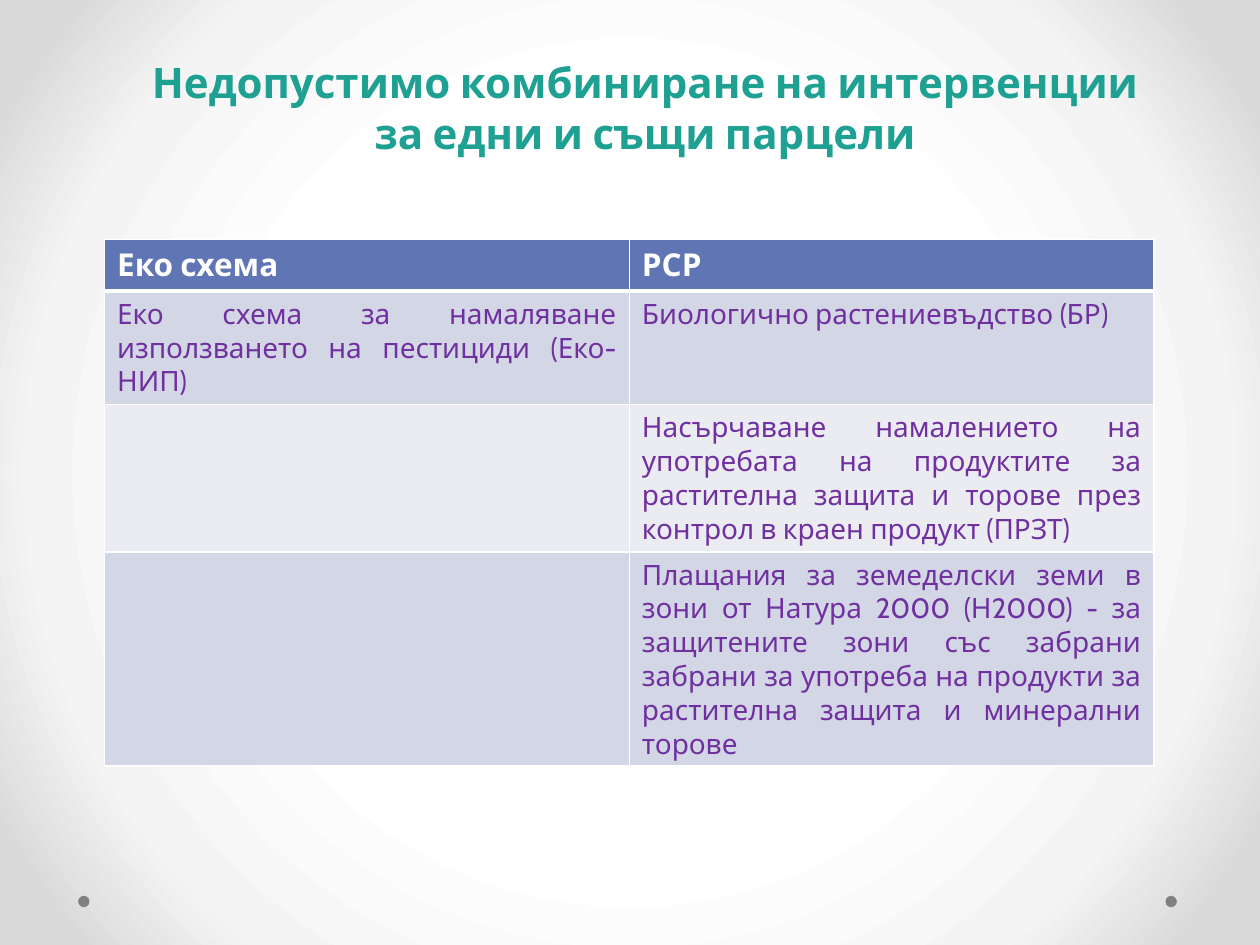
from dataclasses import dataclass

import pptx
import pptx.dml.color
import pptx.enum.shapes
import pptx.enum.text
import pptx.oxml
import pptx.oxml.ns
import pptx.util
from pptx.util import Inches

ALIGN = pptx.enum.text.PP_ALIGN
COLORS = {
    "title": "1EA092",
    "header": "6076B4",
    "odd_row": "D2D6E5",
    "even_row": "EAECF2",
    "body": "7030A0",
    "white": "FFFFFF",
    "dot": "808080",
}
BACKGROUND_STOPS = [(50, "FFFFFF"), (76, "F4F4F4"), (92, "DADADA")]
NAMESPACE = pptx.oxml.ns.nsdecls("a", "p")


@dataclass
class Row:
    height: float
    texts: tuple[str, str]


ROWS = [
    Row(0.41, ("Еко схема", "РСР")),
    Row(0.9, (
        "Еко схема за намаляване използването на пестициди (Еко-НИП)",
        "Биологично растениевъдство (БР)",
    )),
    Row(1.17, (
        "",
        "Насърчаване намалението на употребата на продуктите за растителна "
        "защита и торове през контрол в краен продукт (ПРЗТ)",
    )),
    Row(1.69, (
        "",
        "Плащания за земеделски земи в зони от Натура 2000 (Н2000) - за "
        "защитените зони със забрани забрани за употреба на продукти за "
        "растителна защита и минерални торове",
    )),
]


def rgb(name: str) -> pptx.dml.color.RGBColor:
    return pptx.dml.color.RGBColor.from_string(COLORS[name])


def write_text(text_frame, text: str, *, size: float, color: str,
               bold: bool = False, align=None) -> None:
    """Write each line of the text as a formatted paragraph."""
    text_frame.word_wrap = True
    text_frame.text = text
    for paragraph in text_frame.paragraphs:
        paragraph.alignment = align
        font = paragraph.font
        if paragraph.runs:
            font = paragraph.runs[0].font
        font.name = "Cabin"
        font.size = pptx.util.Pt(size)
        font.bold = bold
        font.color.rgb = rgb(color)


def set_background(slide) -> None:
    """Fill the background with a circular gradient from the centre."""
    stops = "".join(
        f'<a:gs pos="{position * 1000}"><a:srgbClr val="{color}"/></a:gs>'
        for position, color in BACKGROUND_STOPS
    )
    background = pptx.oxml.parse_xml(
        f'<p:bg {NAMESPACE}><p:bgPr><a:gradFill rotWithShape="1">'
        f'<a:gsLst>{stops}</a:gsLst><a:path path="circle">'
        '<a:fillToRect l="50000" t="50000" r="50000" b="50000"/></a:path>'
        '</a:gradFill><a:effectLst/></p:bgPr></p:bg>'
    )
    slide.element.cSld.insert(0, background)


def set_borders(cell, top: float, bottom: float) -> None:
    """Give a cell white borders, 1 point wide at the sides."""
    properties = cell._tc.get_or_add_tcPr()
    widths = {"L": 1, "R": 1, "T": top, "B": bottom}
    for index, (side, width) in enumerate(widths.items()):
        properties.insert(index, pptx.oxml.parse_xml(
            f'<a:ln{side} {NAMESPACE} w="{pptx.util.Pt(width)}"><a:solidFill>'
            f'<a:srgbClr val="{COLORS["white"]}"/></a:solidFill></a:ln{side}>'
        ))


def add_dot(slide, left: float) -> None:
    dot = slide.shapes.add_shape(
        pptx.enum.shapes.MSO_SHAPE.OVAL,
        Inches(left), Inches(7.11), Inches(0.09), Inches(0.09),
    )
    dot.shadow.inherit = False
    dot.fill.solid()
    dot.fill.fore_color.rgb = rgb("dot")
    dot.line.fill.background()


def add_title(slide) -> None:
    title = slide.shapes.add_textbox(
        Inches(0.58), Inches(0.4), Inches(9.08), Inches(0.91))
    write_text(
        title.text_frame,
        "Недопустимо комбиниране на интервенции\nза едни и същи парцели",
        size=24, color="title", bold=True, align=ALIGN.CENTER,
    )
    title.text_frame.auto_size = pptx.enum.text.MSO_AUTO_SIZE.SHAPE_TO_FIT_TEXT


def add_interventions_table(slide, rows: list[Row]) -> None:
    height = sum(row.height for row in rows)
    table = slide.shapes.add_table(
        len(rows), 2, Inches(0.83), Inches(1.9), Inches(8.33), Inches(height)
    ).table
    for row_index, row in enumerate(rows):
        table.rows[row_index].height = Inches(row.height)
        is_header = row_index == 0
        fill = "header" if is_header else ("even_row", "odd_row")[row_index % 2]
        for column_index, text in enumerate(row.texts):
            cell = table.cell(row_index, column_index)
            cell.fill.solid()
            cell.fill.fore_color.rgb = rgb(fill)
            set_borders(cell, top=3 if row_index == 1 else 1,
                        bottom=3 if is_header else 1)
            if is_header:
                write_text(cell.text_frame, text, size=18, color="white", bold=True)
            else:
                write_text(cell.text_frame, text, size=16, color="body",
                           align=ALIGN.JUSTIFY)


def main() -> None:
    presentation = pptx.Presentation()
    presentation.slide_width = Inches(10)
    presentation.slide_height = Inches(7.5)
    slide = presentation.slides.add_slide(presentation.slide_layouts[6])
    set_background(slide)
    for left in (9.25, 0.62):
        add_dot(slide, left)
    add_title(slide)
    add_interventions_table(slide, ROWS)
    presentation.save("out.pptx")


if __name__ == "__main__":
    main()
